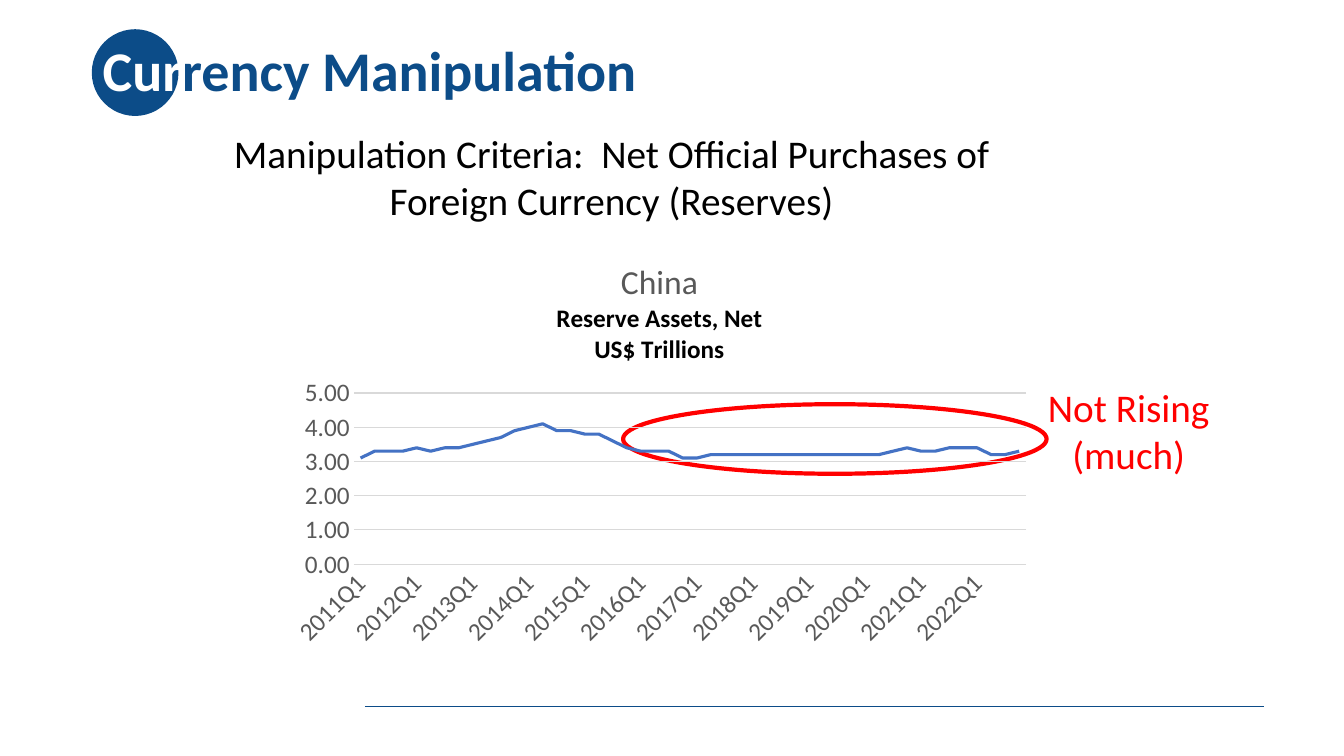
from lxml import etree
from pptx import Presentation
from pptx.chart.data import CategoryChartData as Data
from pptx.dml.color import RGBColor as Color
from pptx.enum.chart import XL_CHART_TYPE as Kind, XL_TICK_MARK as Tick
from pptx.enum.shapes import MSO_CONNECTOR as Link, MSO_SHAPE as Shape
from pptx.enum.text import MSO_ANCHOR as Anchor, PP_ALIGN as Align
from pptx.oxml import parse_xml
from pptx.oxml.ns import nsdecls, qn
from pptx.util import Inches, Pt

HUES = {"navy": "0C4C88", "white": "FFFFFF", "black": "000000", "red": "FF0000",
        "gray": "595959", "grid": "D9D9D9", "blue": "4472C4"}
FACE = "Calibri"
HEAD = [("Cur", "white"), ("rency Manipulation", "navy")]
RULE = "Manipulation Criteria:  Net Official Purchases of Foreign Currency (Reserves)"
NOTE = "Not Rising (much)"
NAMES = [("China", 24, "gray", False), ("Reserve Assets, Net", 18, "black", True),
         ("US$ Trillions", 18, "black", True)]
YEARS = {
    2011: (3.1, 3.3, 3.3, 3.3), 2012: (3.4, 3.3, 3.4, 3.4),
    2013: (3.5, 3.6, 3.7, 3.9), 2014: (4.0, 4.1, 3.9, 3.9),
    2015: (3.8, 3.8, 3.6, 3.4), 2016: (3.3, 3.3, 3.3, 3.1),
    2017: (3.1, 3.2, 3.2, 3.2), 2018: (3.2, 3.2, 3.2, 3.2),
    2019: (3.2, 3.2, 3.2, 3.2), 2020: (3.2, 3.2, 3.3, 3.4),
    2021: (3.3, 3.3, 3.4, 3.4), 2022: (3.4, 3.2, 3.2, 3.3),
}
SPOTS = {
    "dot": (6.83, 3.87, 6.45, 11.47), "head": (6.9, 0, 86.27, 19.33),
    "ring": (46.36, 53.47, 31.51, 9.2), "note": (75.84, 50, 16.28, 13.87),
    "rule": (16.35, 16.4, 58.29, 13.87), "chart": (20.63, 32.27, 56.86, 54.4),
    "foot": (27.16, 93.47, 94.07, 93.47),
}

deck = Presentation()
deck.slide_width, deck.slide_height = Inches(13.33), Inches(7.5)
slide = deck.slides.add_slide(deck.slide_layouts[6])
shapes = slide.shapes


def spot(name):
    sides = (deck.slide_width, deck.slide_height) * 2
    return [int(part * side / 100) for part, side in zip(SPOTS[name], sides)]


def hue(name):
    return Color.from_string(HUES[name])


def style(font, size, color, bold=False):
    font.name, font.size, font.bold = FACE, Pt(size), bold
    font.color.rgb = hue(color)


def say(para, text, size=28, color="black", bold=False, align=Align.CENTER):
    para.alignment = align
    run = para.add_run()
    run.text = text
    style(run.font, size, color, bold)


def pen(line, color, width):
    line.color.rgb, line.width = hue(color), Pt(width)


def box(name):
    frame = shapes.add_textbox(*spot(name)).text_frame
    frame.word_wrap = True
    return frame


def oval(name):
    shape = shapes.add_shape(Shape.OVAL, *spot(name))
    shape.shadow.inherit = False
    return shape


def clear():
    return parse_xml(f'<c:spPr {nsdecls("c", "a")}><a:noFill/><a:ln><a:noFill/></a:ln></c:spPr>')


def draw():
    data = Data(number_format="#,##0.00")
    data.categories = [f"{year}Q{n}" for year in YEARS for n in range(1, 5)]
    data.add_series("Series 1", [val for vals in YEARS.values() for val in vals])
    chart = shapes.add_chart(Kind.LINE, *spot("chart"), data).chart
    style(chart.font, 10, "black")
    chart.has_legend = False
    chart.has_title = True
    frame = chart.chart_title.text_frame
    for n, (text, size, color, bold) in enumerate(NAMES):
        para = frame.add_paragraph() if n else frame.paragraphs[0]
        say(para, text, size, color, bold)
    chart.chart_title.include_in_layout = False

    plot = chart.plots[0]
    plot.vary_by_categories = False
    line = plot.series[0]
    line.smooth = False
    pen(line.format.line, "blue", 2.25)

    cat, val = chart.category_axis, chart.value_axis
    for axis in (cat, val):
        axis.major_tick_mark = axis.minor_tick_mark = Tick.NONE
        style(axis.tick_labels.font, 18, "gray")
    pen(cat.format.line, "grid", 0.75)
    val.format.line.fill.background()
    pen(val.major_gridlines.format.line, "grid", 0.75)
    val.minimum_scale, val.maximum_scale, val.major_unit = 0, 5, 1
    val.tick_labels.number_format = "#,##0.00"
    val.tick_labels.number_format_is_linked = False

    root = cat._element
    root.find(qn("c:txPr")).find(qn("a:bodyPr")).set("rot", "-2700000")
    skip = etree.Element(qn("c:tickLblSkip"), val="4")
    root.find(qn("c:noMultiLvlLbl")).addprevious(skip)

    body = chart._chartSpace.find(qn("c:chart"))
    body.addnext(clear())
    body.find(qn("c:plotArea")).append(clear())


def main():
    foot = shapes.add_connector(Link.STRAIGHT, *spot("foot"))
    pen(foot.line, "navy", 0.5)
    etree.SubElement(foot._element.spPr, qn("a:effectLst"))

    dot = oval("dot")
    dot.fill.solid()
    dot.fill.fore_color.rgb = hue("navy")
    dot.line.fill.background()

    head = box("head")
    head.vertical_anchor = Anchor.MIDDLE
    head.paragraphs[0].line_spacing = 0.9
    for text, color in HEAD:
        say(head.paragraphs[0], text, 40, color, True, Align.LEFT)

    ring = oval("ring")
    ring.fill.background()
    pen(ring.line, "red", 3)

    say(box("note").paragraphs[0], NOTE, color="red")
    say(box("rule").paragraphs[0], RULE)
    draw()
    deck.save("out.pptx")


if __name__ == "__main__":
    main()
